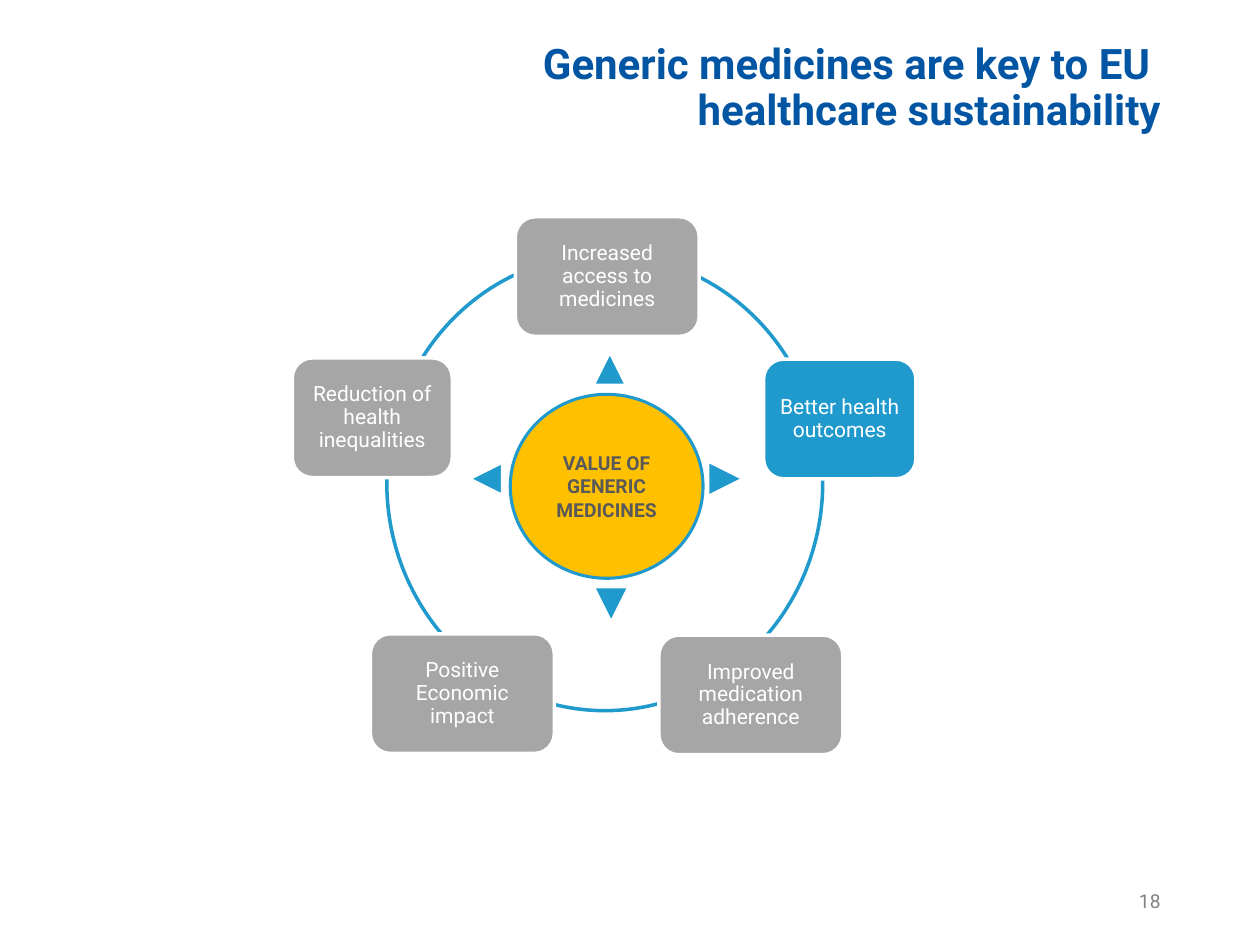
from pptx import Presentation
from pptx.dml.color import RGBColor
from pptx.enum.shapes import MSO_SHAPE
from pptx.enum.text import MSO_ANCHOR, PP_ALIGN
from pptx.util import Inches, Pt

NAVY = RGBColor(0x01, 0x55, 0xA3)
BLUE = RGBColor(0x20, 0x9A, 0xCD)
GREY = RGBColor(0xA6, 0xA6, 0xA6)
AMBER = RGBColor(0xFF, 0xC0, 0x00)
DARK = RGBColor(0x59, 0x59, 0x59)
PAGE_GREY = RGBColor(0x82, 0x82, 0x82)
WHITE = RGBColor(0xFF, 0xFF, 0xFF)

TITLE = "Generic medicines are key to EU \vhealthcare sustainability"
PAGE_NUMBER = "18"
CORE = "VALUE OF GENERIC MEDICINES"

# text, left, top, width, fill
BENEFITS = [
    ("Increased access to medicines", 4.09, 1.72, 1.46, GREY),
    ("Better health outcomes", 6.06, 2.85, 1.21, BLUE),
    ("Improved medication adherence", 5.23, 5.04, 1.46, GREY),
    ("Positive Economic impact", 2.94, 5.03, 1.46, GREY),
    ("Reduction of health inequalities", 2.32, 2.84, 1.27, GREY),
]
BENEFIT_HEIGHT = 0.95
BENEFIT_MARGIN = 0.06

# left, top, rotation, white outline
ARROWS = [
    (4.72, 2.81, 0, True),
    (4.73, 4.67, 180, False),
    (5.63, 3.68, 90, False),
    (3.74, 3.68, 270, True),
]
ARROW_SIZE = 0.24

prs = Presentation()
prs.slide_width, prs.slide_height = Inches(10), Inches(7.5)
slide = prs.slides.add_slide(prs.slide_layouts[6])


def write(holder, text, size, color, align, bold=False, line_spacing=None):
    frame = holder.text_frame
    frame.word_wrap = True
    frame.vertical_anchor = MSO_ANCHOR.MIDDLE
    frame.text = text
    paragraph = frame.paragraphs[0]
    paragraph.alignment = align
    paragraph.line_spacing = line_spacing
    font = paragraph.font
    font.name, font.size, font.bold = "Roboto", Pt(size), bold
    font.color.rgb = color


def add_text(box, *args, **kwargs):
    write(slide.shapes.add_textbox(*map(Inches, box)), *args, **kwargs)


def add_figure(kind, box, fill=None, outline=None, weight=0.75):
    figure = slide.shapes.add_shape(kind, *map(Inches, box))
    figure.shadow.inherit = False
    for part, color in ((figure.fill, fill), (figure.line.fill, outline)):
        if color is None:
            part.background()
        else:
            part.solid()
            part.fore_color.rgb = color
    if outline is not None:
        figure.line.width = Pt(weight)
    return figure


add_text((0.69, -0.02, 8.62, 1.45), TITLE, 24, NAVY, PP_ALIGN.RIGHT,
         bold=True, line_spacing=0.9)
add_text((7.06, 6.95, 2.25, 0.4), PAGE_NUMBER, 11, PAGE_GREY, PP_ALIGN.RIGHT)

add_figure(MSO_SHAPE.OVAL, (3.07, 2.02, 3.46, 3.62), outline=BLUE, weight=2)

for text, left, top, width, fill in BENEFITS:
    benefit = add_figure(MSO_SHAPE.ROUNDED_RECTANGLE,
                         (left, top, width, BENEFIT_HEIGHT), fill, WHITE, 2)
    write(benefit, text, 12, WHITE, PP_ALIGN.CENTER, line_spacing=0.9)
    frame = benefit.text_frame
    frame.margin_left = frame.margin_right = Inches(BENEFIT_MARGIN)
    frame.margin_top = frame.margin_bottom = Inches(BENEFIT_MARGIN)

core = add_figure(MSO_SHAPE.OVAL, (4.05, 3.13, 1.53, 1.46), AMBER, BLUE, 1.75)
write(core, CORE, 11, DARK, PP_ALIGN.CENTER, bold=True)

for left, top, rotation, outlined in ARROWS:
    arrow = add_figure(MSO_SHAPE.ISOSCELES_TRIANGLE,
                       (left, top, ARROW_SIZE, ARROW_SIZE), BLUE,
                       WHITE if outlined else None)
    arrow.rotation = rotation

prs.save("out.pptx")
